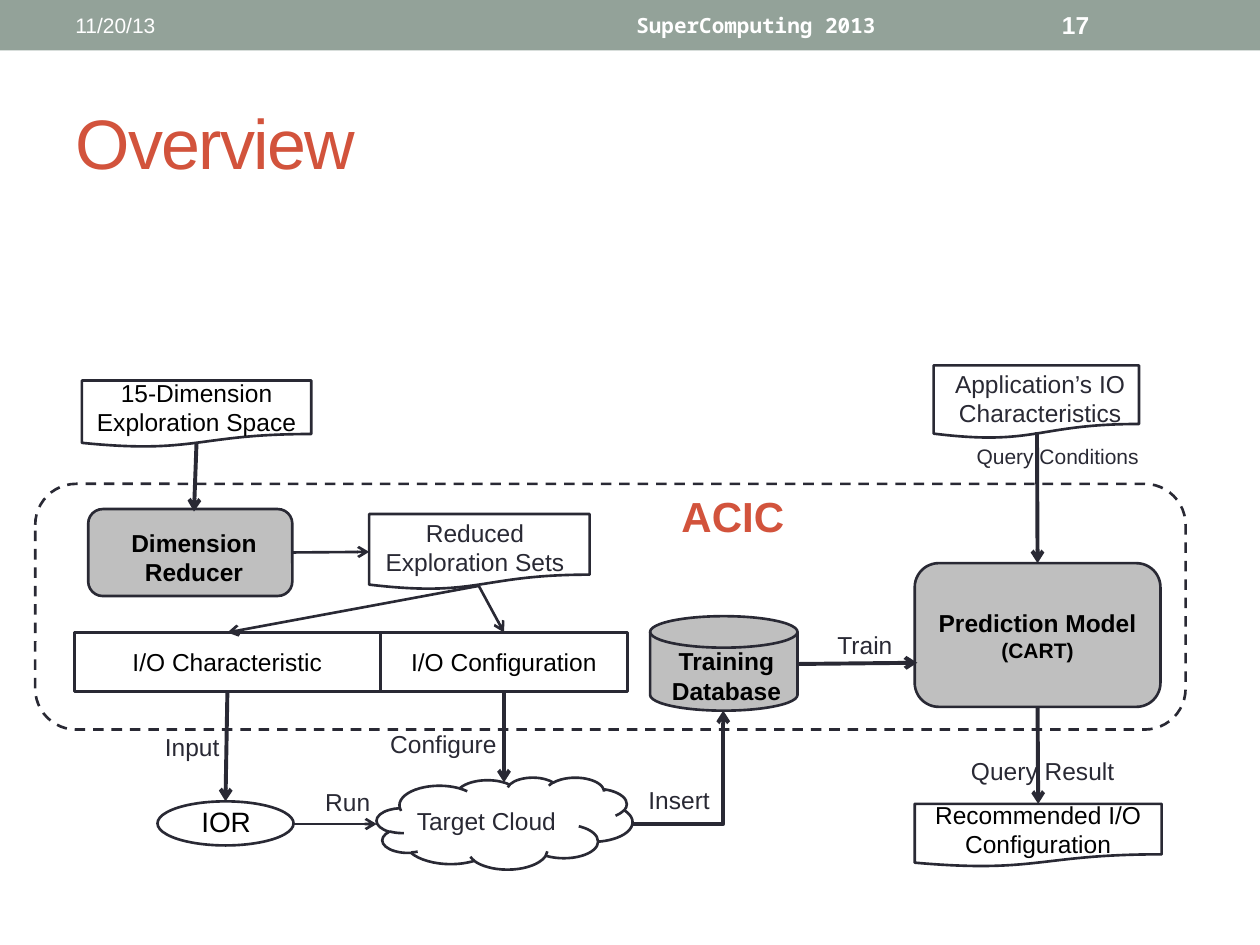
from lxml import etree
from pptx import Presentation
from pptx.dml.color import RGBColor
from pptx.enum.dml import MSO_LINE
from pptx.enum.shapes import MSO_CONNECTOR, MSO_SHAPE
from pptx.enum.text import MSO_ANCHOR, PP_ALIGN
from pptx.oxml.ns import qn
from pptx.util import Inches, Pt

INK = RGBColor(0x29, 0x29, 0x34)
BLACK = RGBColor(0, 0, 0)
WHITE = RGBColor(255, 255, 255)
GREY = RGBColor(0xBF, 0xBF, 0xBF)
SAGE = RGBColor(0x93, 0xA2, 0x99)
RED = RGBColor(0xD2, 0x53, 0x3C)

RECTANGLE = MSO_SHAPE.RECTANGLE
DOCUMENT = MSO_SHAPE.FLOWCHART_DOCUMENT
PROCESS = MSO_SHAPE.FLOWCHART_ALTERNATE_PROCESS
DISK = MSO_SHAPE.FLOWCHART_MAGNETIC_DISK
STRAIGHT, ELBOW = MSO_CONNECTOR.STRAIGHT, MSO_CONNECTOR.ELBOW
LEFT, CENTER = PP_ALIGN.LEFT, PP_ALIGN.CENTER
TOP_ANCHOR, MIDDLE = MSO_ANCHOR.TOP, MSO_ANCHOR.MIDDLE
TOP_SIDE, LEFT_SIDE, BOTTOM_SIDE, RIGHT_SIDE = range(4)


def write(box, lines, size=14, color=INK, bold=False, align=CENTER,
          anchor=TOP_ANCHOR, font="Arial", wrap=True):
    """Fill a box with one paragraph per line."""
    frame = box.text_frame
    frame.word_wrap = wrap
    frame.vertical_anchor = anchor
    frame.text = lines
    for para in frame.paragraphs:
        para.alignment = align
        para.font.name = font
        para.font.size = Pt(size)
        para.font.bold = bold
        para.font.color.rgb = color


def add_text(page, place, lines, **style):
    box = page.shapes.add_textbox(*map(Inches, place))
    write(box, lines, **style)
    return box


def add_node(page, kind, place, fill=None, line=INK, width=1.5):
    """Add an outlined shape, unfilled unless a fill is given."""
    node = page.shapes.add_shape(kind, *map(Inches, place))
    node.shadow.inherit = False
    if fill is None:
        node.fill.background()
    else:
        node.fill.solid()
        node.fill.fore_color.rgb = fill
    if line is None:
        node.line.fill.background()
    else:
        node.line.color.rgb = line
        node.line.width = Pt(width)
    return node


def add_arrow(page, start, end, width=1.5, kind=STRAIGHT):
    """Join two ends; each is a point or a (shape, side) pair."""
    points = [(0, 0) if hasattr(tip[0], "shape_type") else tip
              for tip in (start, end)]
    arrow = page.shapes.add_connector(
        kind, *(Inches(value) for point in points for value in point))
    if start is not points[0]:
        arrow.begin_connect(*start)
    if end is not points[1]:
        arrow.end_connect(*end)
    arrow.line.color.rgb = INK
    arrow.line.width = Pt(width)
    properties = arrow._element.spPr
    etree.SubElement(properties.find(qn("a:ln")), qn("a:tailEnd"), type="arrow")
    etree.SubElement(properties, qn("a:effectLst"))
    if kind == ELBOW:  # a single corner
        properties.find(qn("a:prstGeom")).set("prst", "bentConnector2")
    return arrow


def add_header(page):
    add_node(page, RECTANGLE, (0, 0, 10, 0.4), SAGE, None)
    header = {"color": WHITE, "anchor": MIDDLE}
    add_text(page, (0.5, 0.02, 3.17, 0.36), "11/20/13", size=12, align=LEFT, **header)
    add_text(page, (3.75, 0.02, 4.5, 0.36), "SuperComputing 2013", size=12,
             bold=True, font="Noto Sans Mono", **header)
    add_text(page, (8.33, 0.02, 1.17, 0.36), "17", bold=True, align=LEFT, **header)


def add_title(page):
    title = page.shapes.title
    title.left, title.top, title.width, title.height = map(Inches, (0.5, 0.58, 9, 1.08))
    write(title, "Overview", size=40, color=RED, align=LEFT, anchor=MIDDLE)
    title.text_frame.paragraphs[0].runs[0].font._element.set("spc", "-100")


def add_nodes(page):
    """Draw the flowchart and return the nodes that arrows join."""
    inside = {"color": BLACK, "anchor": MIDDLE}

    # Boundary of the system
    boundary = add_node(page, MSO_SHAPE.ROUNDED_RECTANGLE, (0.28, 3.84, 9.13, 1.95))
    boundary.line.dash_style = MSO_LINE.DASH
    add_text(page, (5.31, 3.84, 1.65, 0.5), "ACIC", size=24, color=RED,
             bold=True, align=LEFT)

    # Documents
    space = add_node(page, DOCUMENT, (0.65, 3.02, 1.82, 0.53), WHITE)
    write(space, "15-Dimension\nExploration Space", **inside)
    reduced = add_node(page, DOCUMENT, (2.93, 4.08, 1.75, 0.6))
    add_text(page, (2.86, 4.06, 1.82, 0.43), "Reduced\nExploration Sets")
    add_node(page, DOCUMENT, (7.41, 2.9, 1.63, 0.58))
    add_text(page, (7.41, 2.88, 1.69, 0.43), "Application’s IO\nCharacteristics")
    result = add_node(page, DOCUMENT, (7.26, 6.38, 1.96, 0.5))
    write(result, "Recommended I/O Configuration", **inside)

    # Processing steps and storage
    reducer = add_node(page, PROCESS, (0.7, 4.04, 1.62, 0.69), GREY)
    add_text(page, (0.72, 4.14, 1.64, 0.57), "Dimension Reducer", color=BLACK, bold=True)
    model = add_node(page, PROCESS, (7.26, 4.47, 1.95, 1.14), GREY)
    write(model, "Prediction Model\n(CART)", bold=True, **inside)
    model.text_frame.paragraphs[1].font.size = Pt(12)
    add_node(page, DISK, (5.16, 4.89, 1.17, 0.75), GREY)
    add_text(page, (5.19, 5.08, 1.15, 0.57), "Training Database", color=BLACK, bold=True)

    # Input and output pair
    characteristic = add_node(page, RECTANGLE, (0.59, 5.02, 2.43, 0.47))
    write(characteristic, "I/O Characteristic", **inside)
    configuration = add_node(page, RECTANGLE, (3.02, 5.02, 1.96, 0.47))
    write(configuration, "I/O Configuration", **inside)

    # Benchmark and cloud
    benchmark = add_node(page, MSO_SHAPE.OVAL, (1.25, 6.36, 1.08, 0.35), WHITE)
    add_text(page, (1.31, 6.34, 0.97, 0.37), "IOR", size=16, color=BLACK)
    add_node(page, MSO_SHAPE.CLOUD, (2.99, 6.17, 2.03, 0.73), WHITE)
    cloud_name = add_node(page, RECTANGLE, (3.21, 6.35, 1.34, 0.34), WHITE, WHITE, 0.75)
    write(cloud_name, "Target Cloud", align=LEFT)
    return reduced, result, reducer, model, characteristic, configuration, benchmark


def add_arrows(page, reduced, result, reducer, model, characteristic,
               configuration, benchmark):
    fork = (3.8, 4.65)
    thin = [
        ((reducer, RIGHT_SIDE), (reduced, LEFT_SIDE)),
        (fork, (characteristic, TOP_SIDE)),
        (fork, (configuration, TOP_SIDE)),
        ((2.33, 6.54), (2.99, 6.54)),
    ]
    thick = [
        ((1.56, 3.51), (1.54, 4.06)),
        ((characteristic, BOTTOM_SIDE), (benchmark, TOP_SIDE)),
        ((configuration, BOTTOM_SIDE), (4, 6.21)),
        ((6.33, 5.27), (7.28, 5.26)),
        ((8.23, 3.43), (model, TOP_SIDE)),
        ((model, BOTTOM_SIDE), (result, TOP_SIDE)),
    ]
    for arrows, width in ((thin, 1.5), (thick, 2.25)):
        for start, end in arrows:
            add_arrow(page, start, end, width)
    add_arrow(page, (5.02, 6.54), (5.74, 5.64), 2.25, ELBOW)


def add_labels(page):
    labels = [
        ("Input", 1.18, 5.76, 0.69),
        ("Run", 2.42, 6.2, 0.68),
        ("Configure", 2.97, 5.74, 1.1),
        ("Insert", 5, 6.18, 0.78),
        ("Train", 6.53, 4.95, 0.67),
        ("Query Result", 7.58, 5.95, 1.39),
    ]
    for name, left, top, width in labels:
        add_text(page, (left, top, width, 0.34), name, wrap=False)
    add_text(page, (7.63, 3.47, 1.53, 0.3), "Query Conditions", size=12, wrap=False)


def main():
    deck = Presentation()
    deck.slide_width, deck.slide_height = Inches(10), Inches(7.5)
    page = deck.slides.add_slide(deck.slide_layouts[5])  # title only
    add_header(page)
    add_title(page)
    nodes = add_nodes(page)
    add_arrows(page, *nodes)
    add_labels(page)
    deck.save("out.pptx")


if __name__ == "__main__":
    main()
